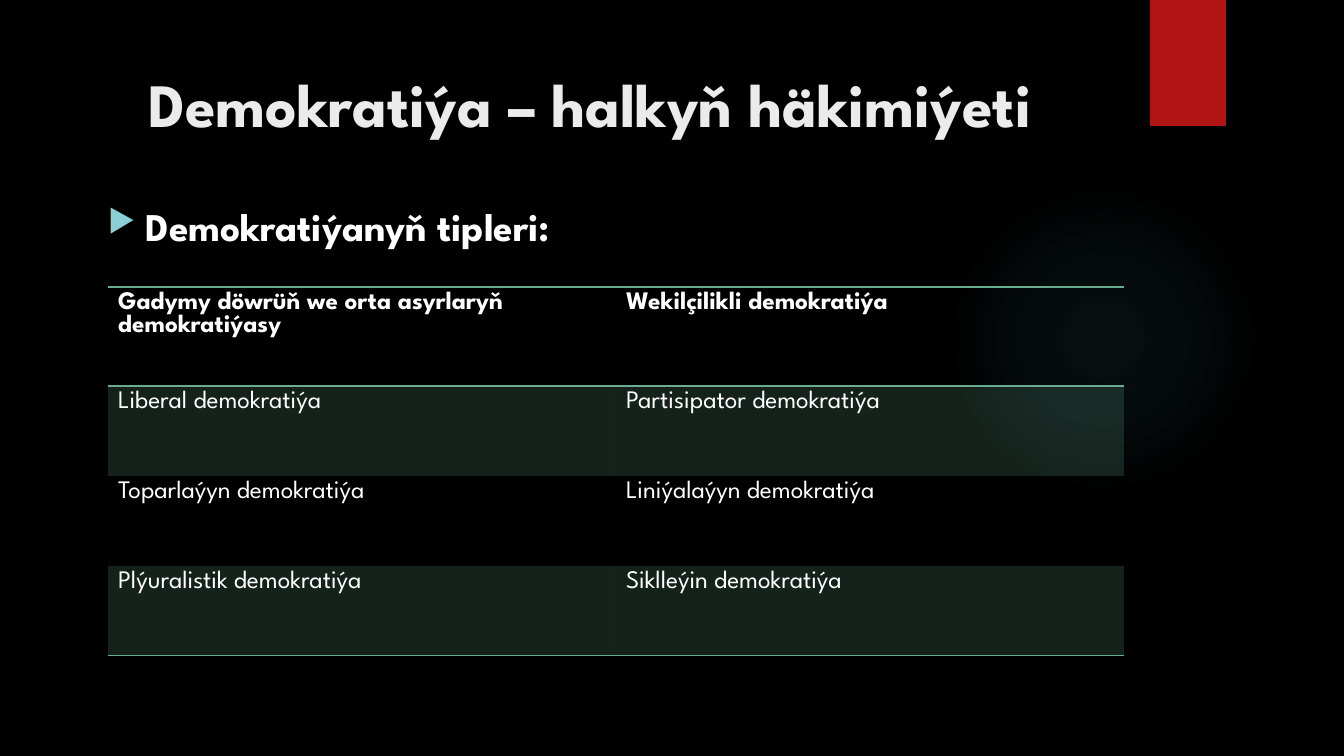
from lxml import etree
from pptx import Presentation
from pptx.dml.color import RGBColor
from pptx.enum.shapes import MSO_SHAPE as Shape
from pptx.enum.text import MSO_ANCHOR as Anchor, PP_ALIGN as Align
from pptx.oxml import parse_xml
from pptx.oxml.ns import nsdecls, qn
from pptx.util import Pt

TITLE = "Demokratiýa – halkyň häkimiýeti"
SUBTITLE = "Demokratiýanyň tipleri:"
TYPES = [
    ("Gadymy döwrüň we orta asyrlaryň demokratiýasy", "Wekilçilikli demokratiýa"),
    ("Liberal demokratiýa", "Partisipator demokratiýa"),
    ("Toparlaýyn demokratiýa", "Liniýalaýyn demokratiýa"),
    ("Plýuralistik demokratiýa", "Siklleýin demokratiýa"),
]
FONT = "League Spartan"
WHITE, GREEN, BULLET = "FFFFFF", "6AAC90", "8AD0D6"
GLOW, GLOW_STOPS = "50B9C1", [(0, 7), (36, 6), (69, 0)]
COLUMN_WIDTH, HEADER_HEIGHT, ROW_HEIGHT = 508, 99, 90
RULES = {0: 1.5, 1: 1, len(TYPES): 1}


def px(length):
    return round(length * 914400 / 100.8)


def box(*lengths):
    return [px(length) for length in lengths]


def color(value):
    return RGBColor.from_string(value)


def add_run(paragraph, text, size, ink, bold):
    run = paragraph.add_run()
    run.text = text
    run.font.name, run.font.size, run.font.bold = FONT, Pt(size), bold
    run.font.color.rgb = color(ink)


def add_block(kind, *place):
    block = slide.shapes.add_shape(kind, *box(*place))
    block.shadow.inherit = False
    block.line.fill.background()
    return block


def add_text(text, size, ink, place, anchor, align):
    frame = slide.shapes.add_textbox(*box(*place)).text_frame
    frame.word_wrap = True
    frame.vertical_anchor = anchor
    paragraph = frame.paragraphs[0]
    paragraph.alignment = align
    add_run(paragraph, text, size, ink, True)
    return paragraph


def border(side, width):
    if not width:
        return parse_xml(f'<a:ln{side} {nsdecls("a")} w="0"><a:noFill/></a:ln{side}>')
    return parse_xml(
        f'<a:ln{side} {nsdecls("a")} w="{Pt(width)}"><a:solidFill>'
        f'<a:srgbClr val="{GREEN}"/></a:solidFill></a:ln{side}>')


deck = Presentation()
deck.slide_width, deck.slide_height = box(1344, 756)
slide = deck.slides.add_slide(deck.slide_layouts[6])
slide.background.fill.solid()
slide.background.fill.fore_color.rgb = color("000000")

glow = add_block(Shape.OVAL, 948, 184, 310, 310)
glow.fill.background()
stops = "".join(
    f'<a:gs pos="{at * 1000}"><a:srgbClr val="{GLOW}">'
    f'<a:alpha val="{alpha * 1000}"/></a:srgbClr></a:gs>' for at, alpha in GLOW_STOPS)
gradient = parse_xml(
    f'<a:gradFill {nsdecls("a")}><a:gsLst>{stops}</a:gsLst><a:path path="circle">'
    '<a:fillToRect l="50000" t="50000" r="50000" b="50000"/></a:path></a:gradFill>')
glow_props = glow.element.spPr
glow_props.replace(glow_props.find(qn("a:noFill")), gradient)

ribbon = add_block(Shape.RECTANGLE, 1150, 0, 76, 126)
ribbon.fill.solid()
ribbon.fill.fore_color.rgb = color("B01513")

add_text(TITLE, 44, "EBEBEB", (72, 50, 1037, 105), Anchor.MIDDLE, Align.CENTER)
subtitle = add_text(SUBTITLE, 28, WHITE, (98, 197, 1108, 60), Anchor.TOP, Align.JUSTIFY)
subtitle_props = subtitle._p.get_or_add_pPr()
subtitle_props.set("marL", str(px(38)))
subtitle_props.set("indent", str(px(-38)))
bullet_color = etree.SubElement(subtitle_props, qn("a:buClr"))
etree.SubElement(bullet_color, qn("a:srgbClr"), val=BULLET)
etree.SubElement(subtitle_props, qn("a:buSzPct"), val="80000")
etree.SubElement(subtitle_props, qn("a:buChar"), char="▶")

heights = [HEADER_HEIGHT] + [ROW_HEIGHT] * (len(TYPES) - 1)
table = slide.shapes.add_table(
    len(TYPES), 2, *box(108, 287, 2 * COLUMN_WIDTH, sum(heights))).table
for column in table.columns:
    column.width = px(COLUMN_WIDTH)
for row, (names, height) in enumerate(zip(TYPES, heights)):
    table.rows[row].height = px(height)
    for col, name in enumerate(names):
        cell = table.cell(row, col)
        add_run(cell.text_frame.paragraphs[0], name, 18, WHITE, row == 0)
        if row % 2:
            cell.fill.solid()
            cell.fill.fore_color.rgb = color(GREEN)
            tint = cell._tc.tcPr.find(".//" + qn("a:srgbClr"))
            etree.SubElement(tint, qn("a:alpha"), val="20000")
        else:
            cell.fill.background()
        widths = {"L": 0, "R": 0, "T": RULES.get(row), "B": RULES.get(row + 1)}
        for order, (side, width) in enumerate(widths.items()):
            cell._tc.tcPr.insert(order, border(side, width))

deck.save("out.pptx")
